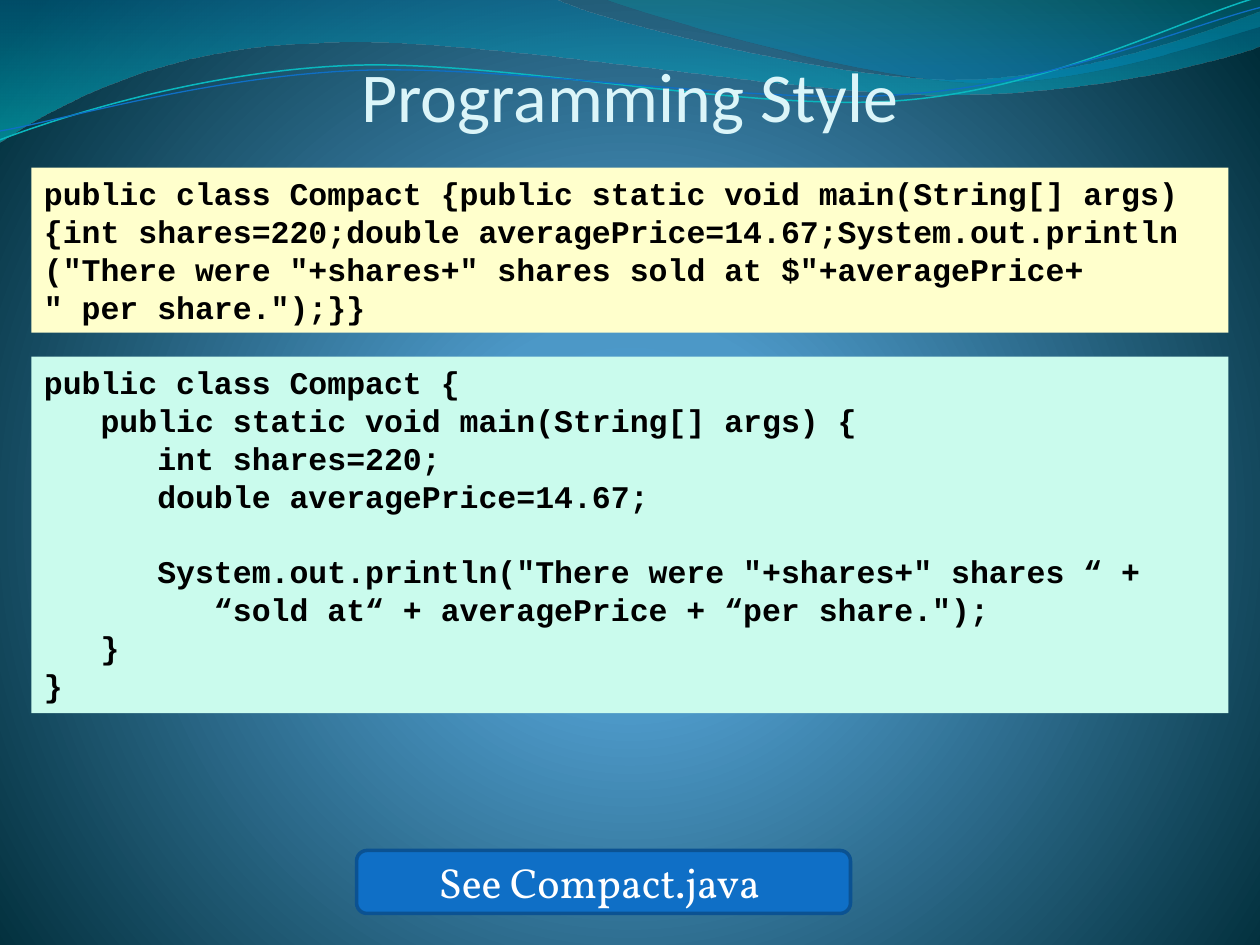
from lxml import etree
from pptx import Presentation
from pptx.dml.color import RGBColor
from pptx.enum import shapes, text
from pptx.oxml import ns
from pptx.util import Inches, Pt

COLORS = {
    "title": "DBF5F9", "code": "000000", "compact": "FFFFCC", "styled": "CAFBED",
    "button": "0F6FC6", "button_edge": "0B5292", "button_text": "FFFFFF",
    "teal_line": "0AB8BF", "blue_line": "0F6FC6",
    "glow": "4AA0D6", "mid": "4C98C7", "night": "002C38",
    "sea": "0074A1", "aqua": "00C6CF", "lagoon": "00A1A9", "sky": "008BBF",
}
MARGIN, WIDTH = 0.25, 9.5
INDENT = 0.45  # three characters of 18 point Courier New
LINE_PITCH = 21.65

# Each paragraph: indent level, its lines, points of space before it
COMPACT_CODE = [
    (0, ['public class Compact {public static void main(String[] args) '
         '{int shares=220;double averagePrice=14.67;System.out.println '
         '("There were "+shares+" shares sold at $"+averagePrice+ ',
         '" per share.");}}'], 0),
]
STYLED_CODE = [
    (0, ["public class Compact {"], 0),
    (1, ["public static void main(String[] args) {"], 0),
    (2, ["int shares=220;"], 0),
    (2, ["double averagePrice=14.67;"], 0),
    (2, ['System.out.println("There were "+shares+" shares “ +',
         '“sold at“ + averagePrice + “per share.");'], LINE_PITCH),
    (1, ["}"], 0),
    (0, ["}"], 0),
]

# Each wave: start point, then steps of 2 (line) or 6 (Bezier curve) numbers
WAVES = [
    ([(0, 0), (4.4, -0.01), (4.76, 0.17, 6.64, 0.63, 7.58, 0.63),
      (8.53, 0.63, 9.58, 0.26, 10, 0.09), (10.01, 0.36),
      (9.83, 0.44, 8.7, 0.76, 7.46, 0.75), (6.22, 0.75, 3.82, 0.28, 2.57, 0.34),
      (1.29, 0.36, 0.46, 0.83, -0.01, 1.13)],
     [(0, "sea", 45), (100, "aqua", 55)]),
    ([(4.79, -0.01), (5.09, 0.11, 6.82, 0.62, 7.69, 0.65),
      (8.56, 0.69, 9.61, 0.32, 10, 0.21), (10, 0)],
     [(0, "lagoon", 30), (80, "sky", 45)]),
]
WAVE_LINES = [
    ([(0, 1.11), (0.48, 0.93, 1.58, 0.57, 2.77, 0.52),
      (3.95, 0.47, 5.93, 0.89, 7.13, 0.8), (8.33, 0.71, 9.38, 0.15, 9.98, -0.02)],
     "teal_line", 0.85),
    ([(0, 1.04), (0.47, 0.96, 1.64, 0.61, 2.83, 0.56),
      (4.03, 0.51, 5.97, 0.84, 7.17, 0.75), (8.36, 0.67, 9.41, 0.21, 10, 0.06)],
     "blue_line", 0.75),
]


def rgb(name):
    return RGBColor.from_string(COLORS[name])


def set_gradient(parent, stops, direction):
    """Replace the gradient in parent by one with stops of (percent, color, opacity)."""
    old = parent.find(".//" + ns.qn("a:gradFill"))
    stop_xml = "".join(
        f'<a:gs pos="{pos * 1000}"><a:srgbClr val="{COLORS[name]}">'
        f'<a:alpha val="{opacity * 1000}"/></a:srgbClr></a:gs>'
        for pos, name, opacity in stops)
    new = etree.fromstring(
        f'<a:gradFill {ns.nsdecls("a")} rotWithShape="1">'
        f"<a:gsLst>{stop_xml}</a:gsLst>{direction}</a:gradFill>")
    old.getparent().replace(old, new)


def add_curve(slide, steps, close):
    """Build an outline through the end points, then bend its Bezier steps."""
    ends = [tuple(map(Inches, step[-2:])) for step in steps]
    builder = slide.shapes.build_freeform(*ends[0])
    builder.add_line_segments(ends[1:], close=close)
    curve = builder.convert_to_shape()
    curve.shadow.inherit = False
    segments = list(curve.element.iter(ns.qn("a:lnTo")))
    for segment, step in zip(segments, steps[1:]):
        if len(step) == 6:
            bend = etree.Element(ns.qn("a:cubicBezTo"))
            for x, y in zip(step[::2], step[1::2]):
                etree.SubElement(bend, ns.qn("a:pt"), x=str(Inches(x) - curve.left),
                                 y=str(Inches(y) - curve.top))
            segment.getparent().replace(segment, bend)
    return curve


def draw_backdrop(slide):
    slide.background.fill.gradient()
    set_gradient(
        slide.element, [(0, "glow", 100), (25, "mid", 100), (100, "night", 100)],
        '<a:path path="circle"><a:fillToRect l="10000" t="110000" r="10000" b="100000"/>'
        "</a:path>")
    for steps, stops in WAVES:
        wave = add_curve(slide, steps, True)
        wave.line.fill.background()
        wave.fill.gradient()
        set_gradient(wave.element, stops, '<a:lin ang="5400000" scaled="0"/>')
    for steps, color, width in WAVE_LINES:
        line = add_curve(slide, steps, False)
        line.fill.background()
        line.line.color.rgb = rgb(color)
        line.line.width = Pt(width)


def add_run(paragraph, words, font, size, color, bold=False):
    run = paragraph.add_run()
    run.text = words
    run.font.name, run.font.size, run.font.bold = font, Pt(size), bold
    run.font.color.rgb = rgb(color)


def place_title(slide, left, top, width, height):
    title = slide.shapes.title
    title.left, title.top, title.width, title.height = map(
        Inches, (left, top, width, height))
    frame = title.text_frame
    frame.margin_left = frame.margin_right = frame.margin_bottom = 0
    frame.vertical_anchor = text.MSO_ANCHOR.BOTTOM
    frame.paragraphs[0].alignment = text.PP_ALIGN.CENTER
    add_run(frame.paragraphs[0], "Programming Style", "Calibri", 40, "title")
    slide.shapes.element.append(title.element)  # in front of the waves


def add_panel(slide, kind, left, top, width, height, color):
    panel = slide.shapes.add_shape(kind, *map(Inches, (left, top, width, height)))
    panel.shadow.inherit = False
    panel.fill.solid()
    panel.fill.fore_color.rgb = rgb(color)
    panel.line.fill.background()
    panel.text_frame.word_wrap = True
    return panel


def add_code(slide, top, height, color, paragraphs):
    panel = add_panel(slide, shapes.MSO_SHAPE.RECTANGLE, MARGIN, top, WIDTH, height, color)
    frame = panel.text_frame
    frame.vertical_anchor = text.MSO_ANCHOR.TOP
    for i, (level, lines, gap) in enumerate(paragraphs):
        paragraph = frame.add_paragraph() if i else frame.paragraphs[0]
        paragraph.alignment = text.PP_ALIGN.LEFT
        paragraph.space_before = Pt(gap)
        paragraph.line_spacing = Pt(LINE_PITCH)
        hanging = INDENT if level and len(lines) > 1 else 0
        properties = paragraph._p.get_or_add_pPr()
        properties.set("marL", str(Inches(INDENT * level + hanging)))
        properties.set("indent", str(Inches(-hanging)))
        for j, line in enumerate(lines):
            if j:
                paragraph.add_line_break()
            add_run(paragraph, line, "Courier New", 18, "code", True)


def add_button(slide, left, top, width, height):
    button = add_panel(slide, shapes.MSO_SHAPE.ROUNDED_RECTANGLE,
                       left, top, width, height, "button")
    button.line.color.rgb = rgb("button_edge")
    button.line.width = Pt(2)
    frame = button.text_frame
    frame.vertical_anchor = text.MSO_ANCHOR.MIDDLE
    frame.paragraphs[0].alignment = text.PP_ALIGN.CENTER
    add_run(frame.paragraphs[0], "See Compact.java ", "Vollkorn", 24, "button_text")


def main():
    deck = Presentation()
    deck.slide_width, deck.slide_height = Inches(10), Inches(7.5)
    slide = deck.slides.add_slide(deck.slide_layouts[5])
    draw_backdrop(slide)
    place_title(slide, 0.5, 0.25, 9, 0.83)
    add_code(slide, 1.33, 1.31, "compact", COMPACT_CODE)
    add_code(slide, 2.83, 2.83, "styled", STYLED_CODE)
    add_button(slide, 2.83, 6.75, 3.92, 0.5)
    deck.save("out.pptx")


if __name__ == "__main__":
    main()
